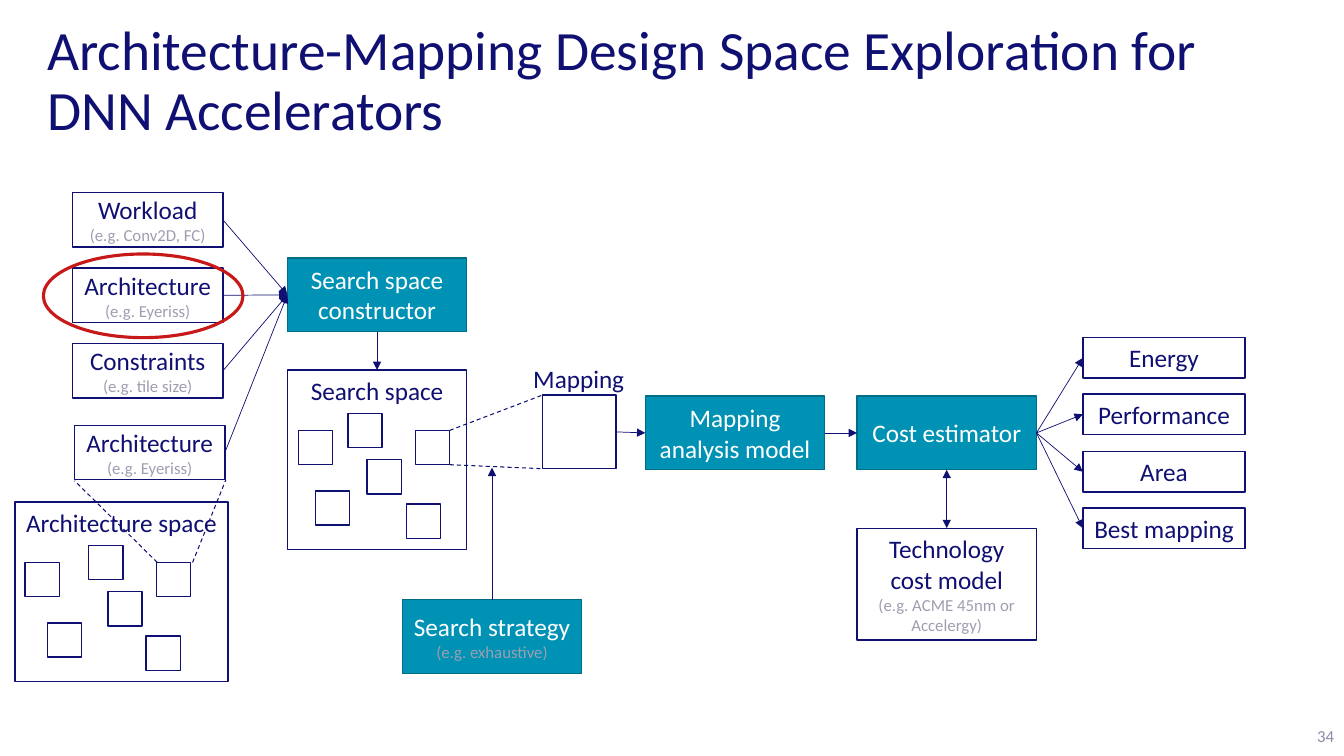
from lxml import etree
from pptx import Presentation
from pptx.dml.color import RGBColor
from pptx.enum.dml import MSO_LINE
from pptx.enum.shapes import MSO_CONNECTOR, MSO_SHAPE
from pptx.enum.text import MSO_ANCHOR, MSO_AUTO_SIZE, PP_ALIGN
from pptx.oxml.ns import qn
from pptx.util import Pt

PX = 9144  # EMU per px, 100 px to the inch
FONT = "Calibri"
NAVY = RGBColor(0x10, 0x10, 0x73)
TEAL = RGBColor(0x00, 0x92, 0xB5)
DARK_TEAL = RGBColor(0x00, 0x6C, 0x86)
WHITE = RGBColor(0xFF, 0xFF, 0xFF)
GREY = RGBColor(0x9E, 0x9E, 0xB1)
PAGE_GREY = RGBColor(0x8C, 0x8C, 0xA6)
RED = RGBColor(0xC8, 0x19, 0x19)

RECT, ELLIPSE = MSO_SHAPE.RECTANGLE, MSO_SHAPE.OVAL
STRAIGHT, DASH = MSO_CONNECTOR.STRAIGHT, MSO_LINE.DASH
TOP_ANCHOR, MIDDLE = MSO_ANCHOR.TOP, MSO_ANCHOR.MIDDLE
LEFT_ALIGN, CENTER, RIGHT_ALIGN = PP_ALIGN.LEFT, PP_ALIGN.CENTER, PP_ALIGN.RIGHT
GROW = MSO_AUTO_SIZE.SHAPE_TO_FIT_TEXT
TOP, LEFT, BOTTOM, RIGHT = range(4)  # connection sites of a rectangle

CELL = 34
CELL_TOPS = (60, 43, 120, 89, 133, 60)


class Diagram:
    def __init__(self, slide):
        self.slide = slide

    def format_paragraph(self, paragraph, size, color, align):
        paragraph.alignment = align
        for run in paragraph.runs:
            run.font.name = FONT
            run.font.size = Pt(size)
            run.font.color.rgb = color

    def label(self, text, left, top, width, height, size, color,
              align=LEFT_ALIGN, anchor=MIDDLE, wrap=True):
        text_box = self.slide.shapes.add_textbox(
            left * PX, top * PX, width * PX, height * PX)
        frame = text_box.text_frame
        frame.text = text
        frame.word_wrap = wrap
        frame.vertical_anchor = anchor
        if not wrap:
            frame.auto_size = GROW
        self.format_paragraph(frame.paragraphs[0], size, color, align)
        return text_box

    def box(self, left, top, width, height, title="", example="",
            filled=False, anchor=MIDDLE):
        """Rectangle with a title and, below it, a small grey example."""
        shape = self.slide.shapes.add_shape(
            RECT, left * PX, top * PX, width * PX, height * PX)
        shape.shadow.inherit = False
        shape.fill.solid()
        shape.fill.fore_color.rgb = TEAL if filled else WHITE
        shape.line.color.rgb = DARK_TEAL if filled else NAVY
        shape.line.width = Pt(1)
        frame = shape.text_frame
        frame.word_wrap = True
        frame.vertical_anchor = anchor
        frame.text = title
        self.format_paragraph(
            frame.paragraphs[0], 18, WHITE if filled else NAVY, CENTER)
        if example:
            note = frame.add_paragraph()
            note.text = example
            self.format_paragraph(note, 12, GREY, CENTER)
        return shape

    def space(self, left, top, width, title, cell_lefts):
        """Frame of scattered candidate cells; returns the frame."""
        frame = self.box(left, top, width, 178, title, anchor=TOP_ANCHOR)
        for cell_left, cell_top in zip(cell_lefts, CELL_TOPS):
            self.box(left + cell_left, top + cell_top, CELL, CELL)
        return frame

    def highlight(self, left, top, width, height):
        ring = self.slide.shapes.add_shape(
            ELLIPSE, left * PX, top * PX, width * PX, height * PX)
        ring.shadow.inherit = False
        ring.fill.background()
        ring.line.color.rgb = RED
        ring.line.width = Pt(2.25)

    def connector(self, x1, y1, x2, y2, weight):
        line = self.slide.shapes.add_connector(
            STRAIGHT, x1 * PX, y1 * PX, x2 * PX, y2 * PX)
        line.line.color.rgb = NAVY
        line.line.width = Pt(weight)
        etree.SubElement(line._element.spPr, qn("a:effectLst"))
        return line

    def zoom_line(self, x1, y1, x2, y2):
        self.connector(x1, y1, x2, y2, 0.75).line.dash_style = DASH

    def arrow(self, source, source_side, target=None, target_side=None,
              tip=(0, 0), both=False):
        """Arrow from a box side to another box side, or to a free tip."""
        line = self.connector(*tip, *tip, 0.5)
        line.begin_connect(source, source_side)
        if target is not None:
            line.end_connect(target, target_side)
        outline = line.line._get_or_add_ln()
        for end in ("a:headEnd", "a:tailEnd") if both else ("a:tailEnd",):
            etree.SubElement(outline, qn(end), type="triangle")


def main():
    presentation = Presentation()
    presentation.slide_width, presentation.slide_height = 1333 * PX, 750 * PX
    slide = presentation.slides.add_slide(presentation.slide_layouts[6])
    d = Diagram(slide)

    heading = d.label(
        "Architecture-Mapping Design Space Exploration for DNN Accelerators",
        37, 40, 1260, 83, 39.6, NAVY)
    heading.text_frame.paragraphs[0].line_spacing = 0.9
    d.label("34", 1265, 710, 68, 40, 12, PAGE_GREY, RIGHT_ALIGN)

    inputs = [
        d.box(72, 191 + 75 * row, 149, 54, title, example)
        for row, (title, example) in enumerate([
            ("Workload", "(e.g. Conv2D, FC)"),
            ("Architecture", "(e.g. Eyeriss)"),
            ("Constraints", "(e.g. tile size)"),
        ])
    ]
    inputs.append(d.box(74, 422, 149, 54, "Architecture", "(e.g. Eyeriss)"))

    search_space = d.space(285, 367, 178, "Search space",
                           (11, 60, 28, 79, 118, 127))
    mapping = d.box(538, 392, 73, 73)
    d.zoom_line(446, 427, 538, 392)
    d.zoom_line(446, 461, 538, 465)
    d.label("Mapping", 519, 356, 112, 40, 18, NAVY,
            anchor=TOP_ANCHOR, wrap=False)

    constructor = d.box(285, 256, 178, 73, "Search space constructor",
                        filled=True)
    strategy = d.box(399, 595, 178, 73, "Search strategy",
                     "(e.g. exhaustive)", filled=True)
    analysis = d.box(640, 393, 178, 73, "Mapping analysis model", filled=True)
    estimator = d.box(850, 393, 178, 73, "Cost estimator", filled=True)
    technology = d.box(850, 524, 178, 111, "Technology cost model",
                       "(e.g. ACME 45nm or Accelergy)")

    for source in inputs:
        d.arrow(source, RIGHT, constructor, LEFT)
    d.arrow(constructor, BOTTOM, search_space, TOP)
    d.arrow(strategy, TOP, tip=(488, 464))
    d.arrow(mapping, RIGHT, analysis, LEFT)
    d.arrow(analysis, RIGHT, estimator, LEFT)
    d.arrow(estimator, BOTTOM, technology, TOP, both=True)

    results = ("Energy", "Performance", "Area", "Best mapping")
    for row, result in enumerate(results):
        result_box = d.box(1074, round(335 + 56.4 * row), 161, 40, result)
        d.arrow(estimator, RIGHT, result_box, LEFT)

    d.highlight(43, 252, 198, 83)
    d.space(15, 498, 211, "Architecture space", (10, 73, 32, 92, 130, 140))
    d.zoom_line(156, 558, 74, 477)
    d.zoom_line(191, 558, 224, 476)

    presentation.save("out.pptx")


if __name__ == "__main__":
    main()
